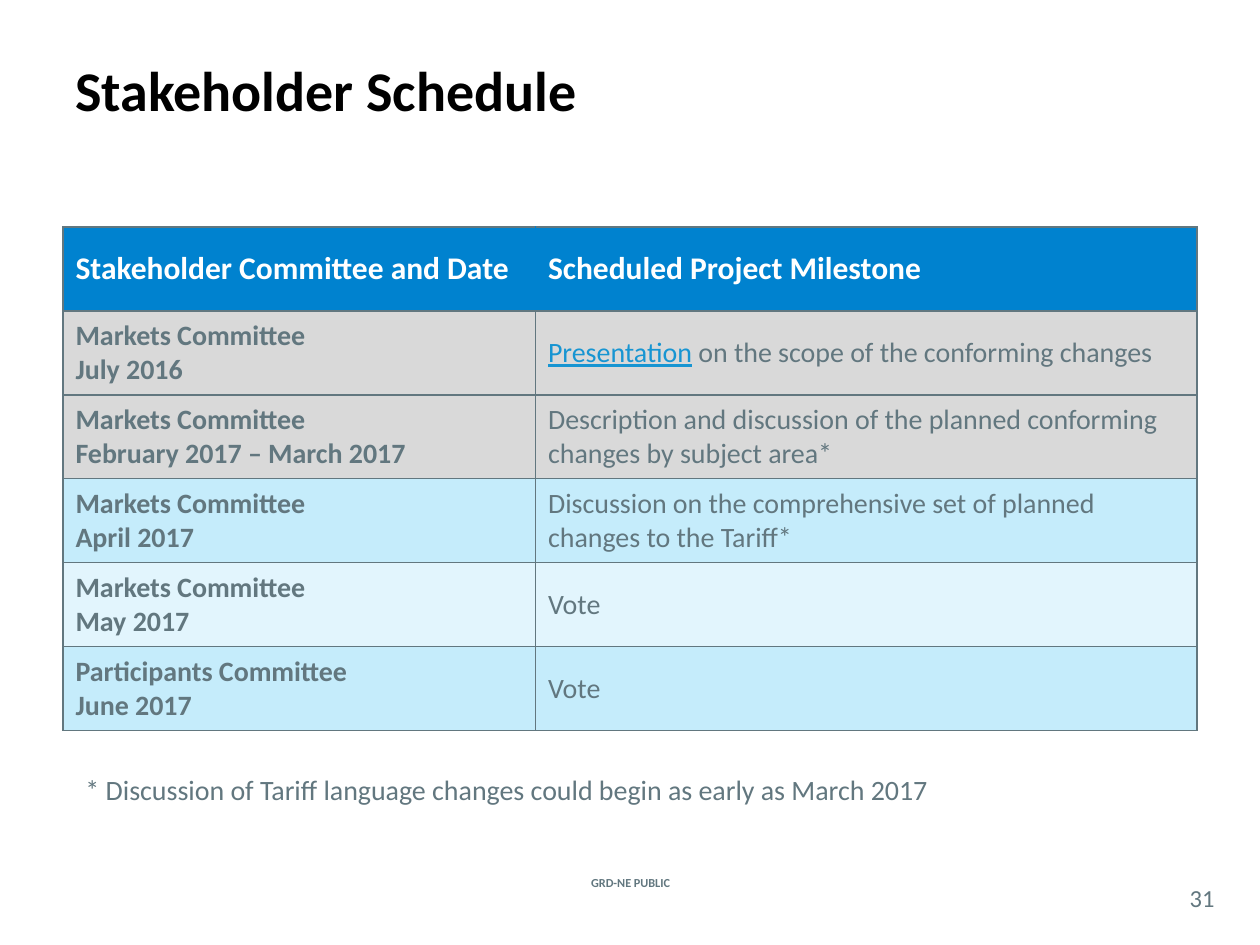
from dataclasses import dataclass

from lxml.etree import SubElement
from pptx import Presentation
from pptx.dml.color import RGBColor
from pptx.enum.text import MSO_ANCHOR, PP_ALIGN
from pptx.oxml.ns import qn
from pptx.util import Inches, Pt


@dataclass(frozen=True)
class Theme:
    font: str = "Calibri"
    black: str = "000000"
    white: str = "FFFFFF"
    slate: str = "62777F"
    link: str = "1795D2"
    header: str = "0082CF"
    past: str = "D9D9D9"
    band: str = "C5ECFB"
    pale: str = "E2F5FD"
    title_size: int = 32
    header_size: int = 18
    body_size: int = 16
    number_size: int = 14
    label_size: int = 7
    border_width: int = 1


THEME = Theme()
HEADINGS = ("Stakeholder Committee and Date", "Scheduled Project Milestone")
MILESTONES = [
    ("Markets Committee\nJuly 2016", "Presentation on the scope of the conforming changes", THEME.past),
    ("Markets Committee\nFebruary 2017 – March 2017",
     "Description and discussion of the planned conforming changes by subject area*", THEME.past),
    ("Markets Committee\nApril 2017",
     "Discussion on the comprehensive set of planned changes to the Tariff*", THEME.band),
    ("Markets Committee\nMay 2017", "Vote", THEME.pale),
    ("Participants Committee\nJune 2017", "Vote", THEME.band),
]
LINKED_WORD = "Presentation"


def style_span(span, size, color, bold=False):
    span.font.name = THEME.font
    span.font.size = Pt(size)
    span.font.bold = bold
    span.font.color.rgb = RGBColor.from_string(color)


def style_frame(frame, size, color, bold=False):
    for para in frame.paragraphs:
        for span in para.runs:
            style_span(span, size, color, bold)


def add_text(page, box, text, size, color=THEME.slate, bold=False,
             align=PP_ALIGN.LEFT, anchor=MSO_ANCHOR.MIDDLE, inset=None):
    frame = page.shapes.add_textbox(*map(Inches, box)).text_frame
    frame.word_wrap = True
    frame.vertical_anchor = anchor
    if inset is not None:
        frame.margin_left = frame.margin_right = Inches(inset)
        frame.margin_top = frame.margin_bottom = Inches(inset)
    frame.text = text
    for para in frame.paragraphs:
        para.alignment = align
    style_frame(frame, size, color, bold)


def add_borders(cell, colors):
    properties = cell._tc.get_or_add_tcPr()
    for position, (side, color) in enumerate(colors.items()):
        line = properties.makeelement(qn(f"a:{side}"), {"w": str(Pt(THEME.border_width))})
        fill = SubElement(line, qn("a:solidFill"))
        SubElement(fill, qn("a:srgbClr"), val=color)
        properties.insert(position, line)


def fill_cell(cell, text, fill, size, color, bold, borders):
    cell.fill.solid()
    cell.fill.fore_color.rgb = RGBColor.from_string(fill)
    cell.vertical_anchor = MSO_ANCHOR.MIDDLE
    cell.text_frame.text = text
    style_frame(cell.text_frame, size, color, bold)
    add_borders(cell, borders)


def underline_first_word(cell, word):
    para = cell.text_frame.paragraphs[0]
    span = para.runs[0]
    rest = para.add_run()
    rest.text = span.text.removeprefix(word)
    span.text = word
    style_span(rest, THEME.body_size, THEME.slate)
    style_span(span, THEME.body_size, THEME.link)
    span.font.underline = True


def add_schedule(page, box):
    left, top, width, height = map(Inches, box)
    row_count = len(MILESTONES) + 1
    table = page.shapes.add_table(row_count, len(HEADINGS), left, top, width, height).table
    first_width = Inches(3.75)
    table.columns[0].width = first_width
    table.columns[1].width = width - first_width
    for row in table.rows:
        row.height = height // row_count

    borders = dict.fromkeys(("lnL", "lnR", "lnT", "lnB"), THEME.slate)
    for column, heading in enumerate(HEADINGS):
        divider = "lnL" if column else "lnR"
        fill_cell(table.cell(0, column), heading, THEME.header, THEME.header_size,
                  THEME.white, True, {**borders, divider: THEME.header})
    for row, (committee, milestone, fill) in enumerate(MILESTONES, 1):
        for column, text in enumerate((committee, milestone)):
            cell = table.cell(row, column)
            fill_cell(cell, text, fill, THEME.body_size, THEME.slate, column == 0, borders)
            if text.startswith(LINKED_WORD):
                underline_first_word(cell, LINKED_WORD)


def add_footer(page, box):
    left, top, width, height = box
    add_text(page, (left + 4.27, top, 1.47, 0.17), "GRD-NE PUBLIC", THEME.label_size,
             bold=True, align=PP_ALIGN.CENTER)
    add_text(page, (left + width - 0.75, top + 0.08, 0.58, 0.25), "31", THEME.number_size,
             align=PP_ALIGN.CENTER, inset=0)


def main():
    deck = Presentation()
    deck.slide_width, deck.slide_height = Inches(10), Inches(7.5)
    page = deck.slides.add_slide(deck.slide_layouts[6])
    add_footer(page, (0, 6.92, 10, 0.58))
    add_text(page, (0.5, 0.08, 9, 1.25), "Stakeholder Schedule", THEME.title_size,
             THEME.black, bold=True)
    add_schedule(page, (0.5, 1.8, 9, 4))
    add_text(page, (0.58, 6.08, 8.92, 0.37),
             "* Discussion of Tariff language changes could begin as early as March 2017",
             THEME.body_size, anchor=MSO_ANCHOR.TOP)
    deck.save("out.pptx")


if __name__ == "__main__":
    main()
